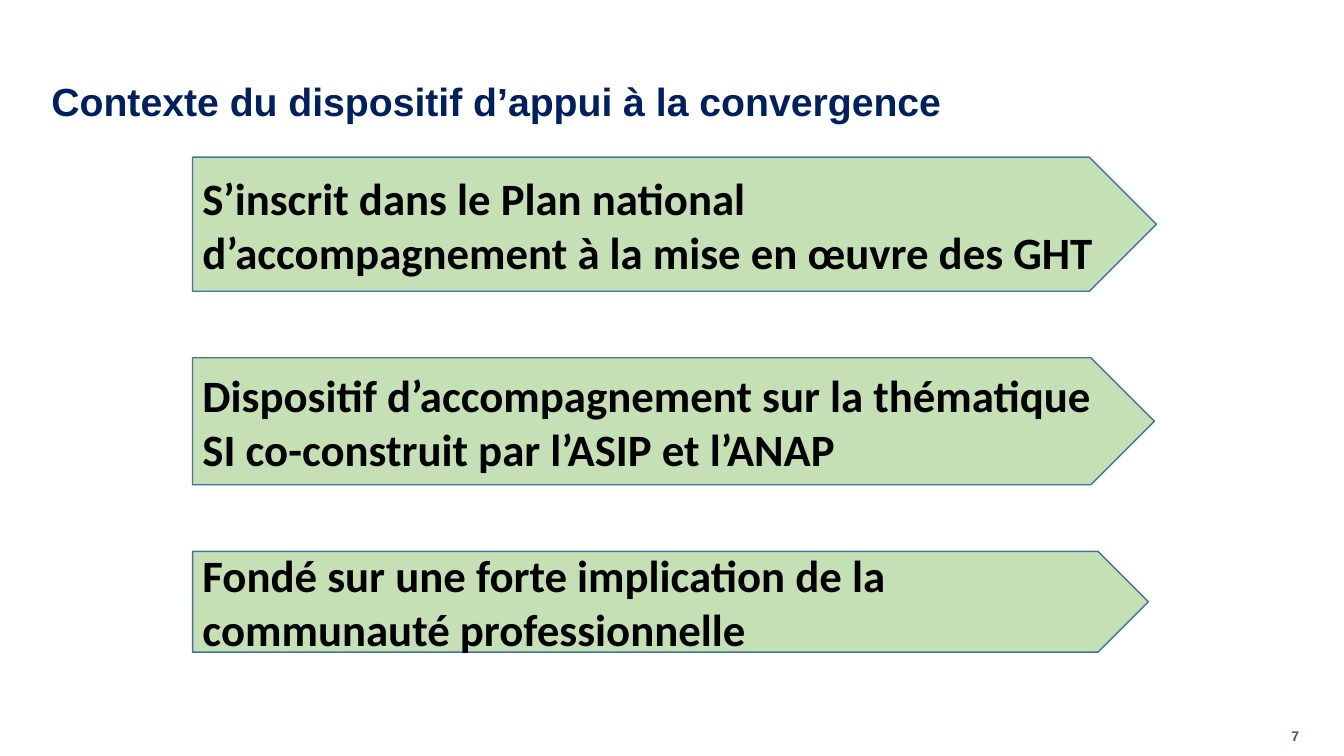
import pptx
import pptx.util
import pptx.dml.color
import pptx.enum.shapes
import pptx.enum.text
from dataclasses import dataclass

Inches, Pt = pptx.util.Inches, pptx.util.Pt
ALIGN = pptx.enum.text.PP_ALIGN
MIDDLE = pptx.enum.text.MSO_ANCHOR.MIDDLE


@dataclass(frozen=True)
class Theme:
    title: str = "002060"
    number: str = "36616C"
    text: str = "000000"
    arrow_fill: str = "C5E0B4"
    arrow_line: str = "43739E"
    title_font: str = "Arial"
    body_font: str = "Calibri"
    title_size: int = 28
    body_size: int = 32
    number_size: int = 10


THEME = Theme()
SLIDE_W, SLIDE_H = 13.33, 7.5

# Arrow stack: common left edge, equal gaps
ARROW_LEFT, ARROW_TOP, ARROW_GAP = 1.91, 1.56, 0.66
ARROWS = [  # text, width, height
    ("S’inscrit dans le Plan national d’accompagnement à la mise en œuvre des GHT", 9.56, 1.33),
    ("Dispositif d’accompagnement sur la thématique SI co-construit par l’ASIP et l’ANAP", 9.54, 1.26),
    ("Fondé sur une forte implication de la communauté professionnelle", 9.48, 1.0),
]


def rgb(value):
    return pptx.dml.color.RGBColor.from_string(value)


def write(sp, text, font, size, color, wrap=True):
    """Put one bold, left-aligned run in the middle of a shape."""
    tf = sp.text_frame
    tf.word_wrap = wrap
    tf.auto_size = pptx.enum.text.MSO_AUTO_SIZE.NONE
    tf.vertical_anchor = MIDDLE
    p = tf.paragraphs[0]
    p.alignment = ALIGN.LEFT
    r = p.add_run()
    r.text = text
    r.font.name, r.font.size, r.font.bold = font, Pt(size), True
    r.font.color.rgb = rgb(color)
    return p


def add_title(s, text):
    sp = s.shapes.title
    sp.left, sp.top, sp.width, sp.height = map(Inches, (0.41, 0.78, 12.73, 0.49))
    p = write(sp, text, THEME.title_font, THEME.title_size, THEME.title, wrap=False)
    p.line_spacing = 0.9


def add_arrow(s, top, text, width, height):
    sp = s.shapes.add_shape(pptx.enum.shapes.MSO_SHAPE.PENTAGON,
                            *map(Inches, (ARROW_LEFT, top, width, height)))
    sp.shadow.inherit = False
    sp.fill.solid()
    sp.fill.fore_color.rgb = rgb(THEME.arrow_fill)
    sp.line.color.rgb = rgb(THEME.arrow_line)
    sp.line.width = Pt(1)
    write(sp, text, THEME.body_font, THEME.body_size, THEME.text)


def add_page_number(s, number):
    width, height = 0.62, 0.4
    sp = s.shapes.add_textbox(*map(Inches, (SLIDE_W - width, SLIDE_H - height, width, height)))
    write(sp, number, THEME.title_font, THEME.number_size, THEME.number)


def main():
    prs = pptx.Presentation()
    prs.slide_width, prs.slide_height = Inches(SLIDE_W), Inches(SLIDE_H)
    s = prs.slides.add_slide(prs.slide_layouts[5])  # title only

    add_page_number(s, "7")
    add_title(s, "Contexte du dispositif d’appui à la convergence")

    # Three statements, top to bottom
    top = ARROW_TOP
    for text, width, height in ARROWS:
        add_arrow(s, top, text, width, height)
        top += height + ARROW_GAP

    prs.save("out.pptx")


if __name__ == "__main__":
    main()
